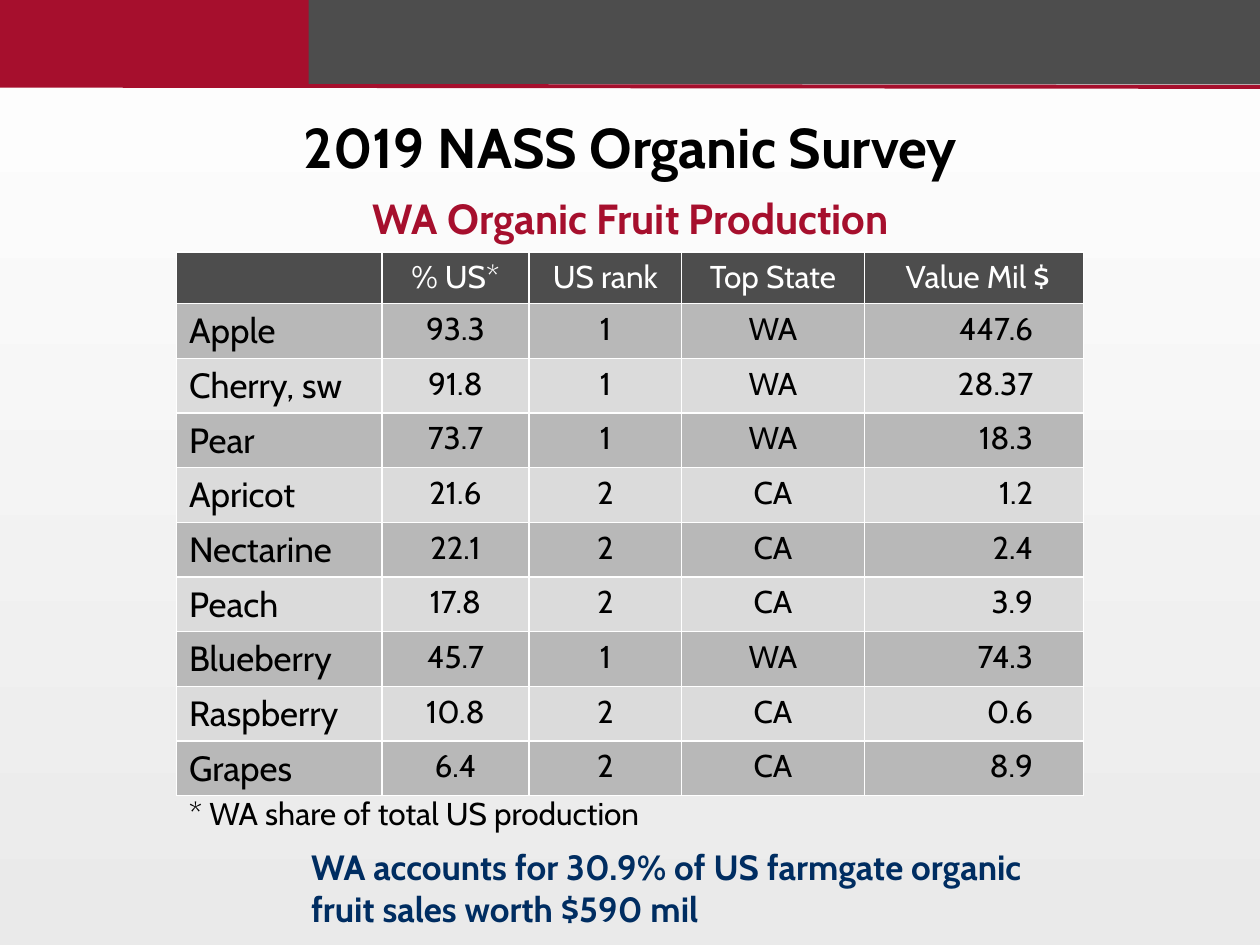
import pptx
import pptx.dml.color
import pptx.enum.shapes
import pptx.enum.text
import pptx.util
from lxml import etree

Inches = pptx.util.Inches
RGB = pptx.dml.color.RGBColor
ALIGN = pptx.enum.text.PP_ALIGN
SHAPE = pptx.enum.shapes.MSO_SHAPE

BLACK = RGB(0x00, 0x00, 0x00)
WHITE = RGB(0xFF, 0xFF, 0xFF)
MIST = RGB(0xEA, 0xEA, 0xEA)
GRAY = RGB(0x4D, 0x4D, 0x4D)
DARK = RGB(0xB8, 0xB8, 0xB8)
LIGHT = RGB(0xDB, 0xDB, 0xDB)
RED = RGB(0xA6, 0x0F, 0x2D)
NAVY = RGB(0x00, 0x2D, 0x61)

FONT = "Cabin"
COLS = [1.63, 1.17, 1.21, 1.45, 1.74]
HEAD = ["", "% US*", "US rank", "Top State", "Value Mil $"]
FRUIT = [
    ["Apple", "93.3", "1", "WA", "447.6"],
    ["Cherry, sw", "91.8", "1", "WA", "28.37"],
    ["Pear", "73.7", "1", "WA", "18.3"],
    ["Apricot", "21.6", "2", "CA", "1.2"],
    ["Nectarine", "22.1", "2", "CA", "2.4"],
    ["Peach", "17.8", "2", "CA", "3.9"],
    ["Blueberry", "45.7", "1", "WA", "74.3"],
    ["Raspberry", "10.8", "2", "CA", "0.6"],
    ["Grapes", "6.4", "2", "CA", "8.9"],
]


def write(frame, text, size=18, color=BLACK, bold=False, align=ALIGN.LEFT):
    """Put one formatted paragraph in a text frame."""
    para = frame.paragraphs[0]
    para.alignment = align
    run = para.add_run()
    run.text = text
    font = run.font
    font.name, font.size, font.bold = FONT, pptx.util.Pt(size), bold
    font.color.rgb = color


def note(slide, box, text, **style):
    """Add a wrapped text box."""
    frame = slide.shapes.add_textbox(*map(Inches, box)).text_frame
    frame.word_wrap = True
    write(frame, text, **style)


def title(slide, box, text):
    """Place and format the title placeholder."""
    shape = slide.shapes.title
    shape.left, shape.top, shape.width, shape.height = map(Inches, box)
    frame = shape.text_frame
    frame.word_wrap = True
    frame.auto_size = pptx.enum.text.MSO_AUTO_SIZE.NONE
    frame.vertical_anchor = pptx.enum.text.MSO_ANCHOR.TOP
    write(frame, text, size=32, bold=True, align=ALIGN.CENTER)


def backdrop(slide):
    """Fade the background from white down to pale gray."""
    fill = slide.background.fill
    fill.gradient()
    fill.gradient_angle = 270
    for stop, color in zip(fill.gradient_stops, (WHITE, MIST)):
        stop.color.rgb = color


def banner(slide, box):
    """Draw the gray and red bands with the red rule below."""
    left, top, width, height = box
    for span, color in ((width, GRAY), (2.45, RED)):
        band = slide.shapes.add_shape(
            SHAPE.RECTANGLE, *map(Inches, (left, top, span, height)))
        band.shadow.inherit = False
        band.fill.solid()
        band.fill.fore_color.rgb = color
        band.line.fill.background()
    rule = slide.shapes.add_connector(
        pptx.enum.shapes.MSO_CONNECTOR.STRAIGHT,
        Inches(left), Inches(top + height + 0.01),
        Inches(left + width), Inches(top + height + 0.02))
    rule.line.color.rgb = RED
    rule.line.width = pptx.util.Pt(2.25)
    etree.SubElement(rule._element.spPr, pptx.oxml.ns.qn("a:effectLst"))


def chart(slide, box):
    """Build the fruit table with a dark head and banded rows."""
    rows = [HEAD] + FRUIT
    table = slide.shapes.add_table(
        len(rows), len(COLS), *map(Inches, box)).table
    for col, width in zip(table.columns, COLS):
        col.width = Inches(width)
    last = len(COLS) - 1
    for r, row in enumerate(rows):
        table.rows[r].height = Inches(0.43 if r else 0.41)
        for c, text in enumerate(row):
            cell = table.cell(r, c)
            cell.fill.solid()
            style = {"align": ALIGN.CENTER}
            if r == 0:
                cell.fill.fore_color.rgb = GRAY
                style["color"] = WHITE
                if c == last:
                    cell.margin_left = Inches(0.16)
            else:
                cell.fill.fore_color.rgb = DARK if r % 2 else LIGHT
                if c == 0:
                    style = {"size": 20}
                elif c == last:
                    style = {"align": ALIGN.RIGHT}
                    cell.margin_right = Inches(0.4)
            if text:
                write(cell.text_frame, text, **style)


def main():
    """Build and save the slide."""
    deck = pptx.Presentation()
    deck.slide_width, deck.slide_height = Inches(10), Inches(7.5)
    slide = deck.slides.add_slide(deck.slide_layouts[5])
    backdrop(slide)
    banner(slide, (0, 0, 10, 0.67))
    title(slide, (1.4, 0.84, 7.21, 0.64), "2019 NASS Organic Survey")
    note(slide, (1.4, 1.48, 7.21, 0.5), "WA Organic Fruit Production",
         size=24, color=RED, bold=True, align=ALIGN.CENTER)
    chart(slide, (1.4, 2, 7.2, 4.31))
    note(slide, (1.4, 6.25, 4.11, 0.4), "* WA share of total US production")
    note(slide, (2.37, 6.66, 6.11, 0.77),
         "WA accounts for 30.9% of US farmgate organic fruit sales "
         "worth $590 mil", size=20, color=NAVY, bold=True)
    deck.save("out.pptx")


if __name__ == "__main__":
    main()
